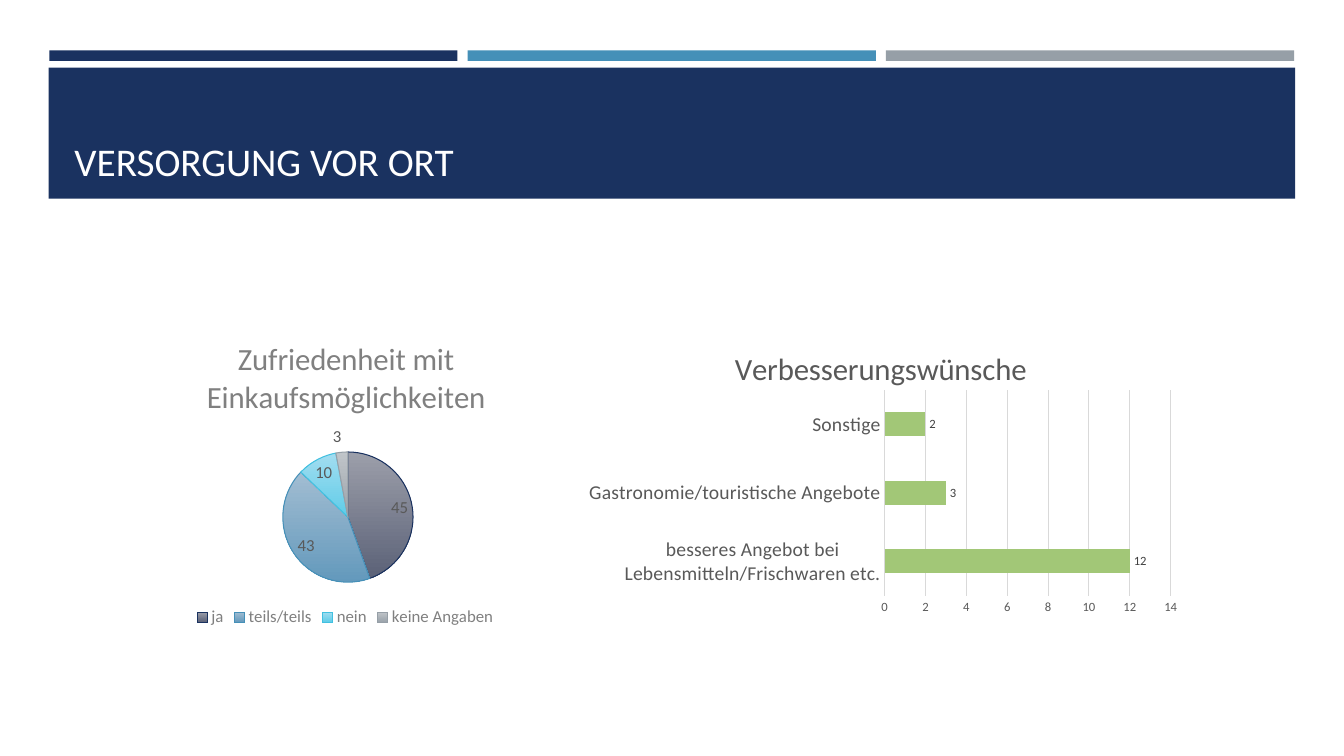
import pptx
import pptx.chart.data
import pptx.dml.color
import pptx.enum.chart
import pptx.enum.shapes
import pptx.enum.text
import pptx.oxml
import pptx.oxml.ns
import pptx.util

Pt = pptx.util.Pt
qn = pptx.oxml.ns.qn
charts = pptx.enum.chart
FONT = "Calibri"

# Content
HEADING = "VERSORGUNG VOR ORT"
NAVY, BLUE, GREY = "1A3260", "4590B8", "969FA7"
STRIPES = [NAVY, BLUE, GREY]

SATISFACTION = {
    "title": "Zufriedenheit mit Einkaufsmöglichkeiten",
    "values": {"ja": 45, "teils/teils": 43, "nein": 10, "keine Angaben": 3},
    "box": (56.2, 218.2, 380.9, 232.6),
    "title_at": {"x": 0.23, "y": 0.08},
    "plot_at": {"x": 0.38, "y": 0.45, "w": 0.25, "h": 0.4},
}
# Gradient top, gradient bottom, outline
SLICES = [
    ("9C9FAA", "5B6177", NAVY),
    ("A2BDD2", "6399BC", BLUE),
    ("A2DDF0", "5FCCE8", "42C0E0"),
    ("C0C5C9", "9BA3AB", GREY),
]
WISHES = {
    "title": "Verbesserungswünsche",
    "values": {
        "besseres Angebot bei Lebensmitteln/Frischwaren etc.": 12,
        "Gastronomie/touristische Angebote": 3,
        "Sonstige": 2,
    },
    "box": (405.4, 226.8, 444.2, 216),
    "title_at": {"x": 0.26, "y": 0.08},
    "plot_at": {"x": 0.51, "y": 0.24, "w": 0.46, "h": 0.68},
}


def color(value):
    return pptx.dml.color.RGBColor.from_string(value)


def style(font, size, value):
    font.name, font.size, font.bold = FONT, Pt(size), False
    font.color.rgb = color(value)


def add_block(left, top, width, height, value):
    block = slide.shapes.add_shape(
        pptx.enum.shapes.MSO_SHAPE.RECTANGLE, Pt(left), Pt(top), Pt(width), Pt(height))
    block.shadow.inherit = False
    block.fill.solid()
    block.fill.fore_color.rgb = color(value)
    block.line.fill.background()
    return block


def manual_layout(parent, index, place):
    """Place a chart title or the inner plot area by fractions of the chart."""
    for old in parent.findall(qn("c:layout")):
        parent.remove(old)
    entries = {"layoutTarget": "inner"} if "w" in place else {}
    entries |= {"xMode": "edge", "yMode": "edge", **place}
    inner = "".join(f'<c:{key} val="{value}"/>' for key, value in entries.items())
    parent.insert(index, pptx.oxml.parse_xml(
        f'<c:layout {pptx.oxml.ns.nsdecls("c")}><c:manualLayout>{inner}'
        "</c:manualLayout></c:layout>"))


def add_chart(content, kind, title_color, label_size, label_color, label_position):
    data = pptx.chart.data.CategoryChartData()
    data.categories = list(content["values"])
    data.add_series("Series 1", list(content["values"].values()))
    chart = slide.shapes.add_chart(kind, *map(Pt, content["box"]), data).chart
    style(chart.font, 10, "000000")
    heading = chart.chart_title.text_frame.paragraphs[0]
    heading.text = content["title"]
    style(heading.font, 22, title_color)
    chart.chart_title.include_in_layout = False
    manual_layout(chart.chart_title.element, 1, content["title_at"])
    manual_layout(chart.element.find(".//" + qn("c:plotArea")), 0, content["plot_at"])
    labels = chart.plots[0].series[0].data_labels
    labels.show_value = True
    labels.position = label_position
    style(labels.font, label_size, label_color)
    return chart


presentation = pptx.Presentation()
presentation.slide_width, presentation.slide_height = Pt(960), Pt(540)
slide = presentation.slides.add_slide(presentation.slide_layouts[5])

# Stripes and title band
for column, stripe_color in enumerate(STRIPES):
    add_block(35.2 + column * 298.8, 36, 291.6, 7.5, stripe_color)
band = add_block(34.8, 48.3, 890.4, 93.6, NAVY)

heading = slide.shapes.title
band.element.addnext(heading.element)
heading.left, heading.top, heading.width, heading.height = map(Pt, (46, 55.4, 868.3, 80))
heading.text_frame.text = HEADING
heading.text_frame.vertical_anchor = pptx.enum.text.MSO_ANCHOR.BOTTOM
heading.text_frame.paragraphs[0].alignment = pptx.enum.text.PP_ALIGN.LEFT
style(heading.text_frame.paragraphs[0].font, 28, "FFFFFF")

# Satisfaction pie
pie = add_chart(SATISFACTION, charts.XL_CHART_TYPE.PIE, "808080",
                12, "595959", charts.XL_LABEL_POSITION.BEST_FIT)
pie.has_legend = True
pie.legend.position = charts.XL_LEGEND_POSITION.BOTTOM
pie.legend.include_in_layout = False
style(pie.legend.font, 12, "808080")
pie.plots[0].vary_by_categories = True
for index, (top_color, bottom_color, outline) in enumerate(SLICES):
    look = pie.plots[0].series[0].points[index].format
    look.fill.gradient()
    look.fill.gradient_angle = 270
    for stop, stop_color in zip(look.fill.gradient_stops, (top_color, bottom_color)):
        stop.color.rgb = color(stop_color)
    look.line.color.rgb = color(outline)
    look.line.width = Pt(0.75)

# Wishes bar chart
bars = add_chart(WISHES, charts.XL_CHART_TYPE.BAR_CLUSTERED, "595959",
                 9, "404040", charts.XL_LABEL_POSITION.OUTSIDE_END)
bars.has_legend = False
bars.plots[0].gap_width = 182
bars.plots[0].vary_by_categories = False
bar_fill = bars.plots[0].series[0].format.fill
bar_fill.solid()
bar_fill.fore_color.rgb = color("A2C777")

wishes, counts = bars.category_axis, bars.value_axis
for axis, size in ((wishes, 14), (counts, 9)):
    axis.major_tick_mark = axis.minor_tick_mark = charts.XL_TICK_MARK.NONE
    style(axis.tick_labels.font, size, "595959")
counts.minimum_scale, counts.maximum_scale, counts.major_unit = 0, 14, 2
counts.format.line.fill.background()
counts.has_major_gridlines = True
for line in (wishes.format.line, counts.major_gridlines.format.line):
    line.color.rgb = color("D9D9D9")
    line.width = Pt(0.75)

presentation.save("out.pptx")
